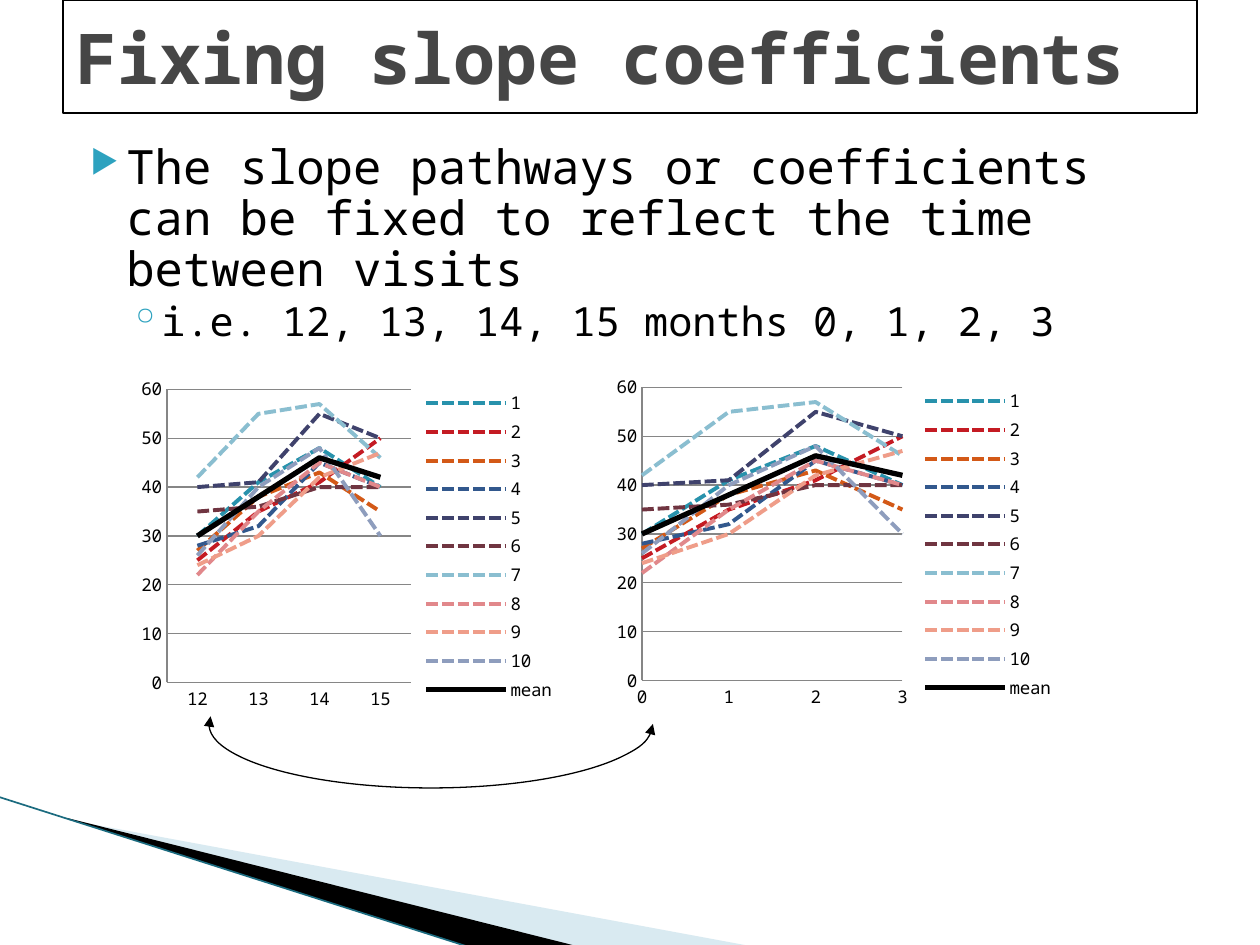
from lxml import etree
from pptx import Presentation
from pptx.chart.data import CategoryChartData
from pptx.dml.color import RGBColor
from pptx.enum.chart import XL_CHART_TYPE, XL_LEGEND_POSITION, XL_MARKER_STYLE, XL_TICK_MARK
from pptx.enum.dml import MSO_LINE
from pptx.enum.shapes import MSO_CONNECTOR, MSO_SHAPE
from pptx.enum.text import MSO_ANCHOR, PP_ALIGN
from pptx.oxml.ns import qn
from pptx.util import Pt

SCALE = 914400 / 126
FONT = "Noto Sans Mono"
BLACK = RGBColor(0x00, 0x00, 0x00)
WHITE = RGBColor(0xFF, 0xFF, 0xFF)
TITLE_GRAY = RGBColor(0x46, 0x46, 0x46)
GRID_GRAY = RGBColor(0x86, 0x86, 0x86)
PALE_BLUE = RGBColor(0xA0, 0xCB, 0xDC)
DARK_TEAL = RGBColor(0x1B, 0x6B, 0x7F)
SERIES_COLORS = [
    RGBColor(0x28, 0x92, 0xAC), RGBColor(0xC4, 0x1B, 0x23),
    RGBColor(0xD3, 0x59, 0x17), RGBColor(0x32, 0x58, 0x8D),
    RGBColor(0x3F, 0x42, 0x6C), RGBColor(0x70, 0x35, 0x41),
    RGBColor(0x8A, 0xBE, 0xD0), RGBColor(0xE1, 0x88, 0x8B),
    RGBColor(0xEF, 0x9D, 0x89), RGBColor(0x8E, 0x9D, 0xBD),
]
DASHED = MSO_LINE.SQUARE_DOT
NO_TICK = XL_TICK_MARK.NONE


def px(*lengths):
    return [round(length * SCALE) for length in lengths]


def add_child(parent, tag, **attributes):
    return etree.SubElement(parent, qn(tag), attributes)


presentation = Presentation()
presentation.slide_width, presentation.slide_height = px(1260, 945)
slide = presentation.slides.add_slide(presentation.slide_layouts[6])
slide.background.fill.solid()
slide.background.fill.fore_color.rgb = WHITE
shapes = slide.shapes

for color, opacity, start, corners in [
    (PALE_BLUE, "40000", (69, 820), [(750, 946), (575, 946), (69, 819)]),
    (BLACK, "100000", (67, 818), [(576, 946), (469, 947), (68, 819)]),
]:
    builder = shapes.build_freeform(*start, scale=SCALE)
    builder.add_line_segments(corners)
    wedge = builder.convert_to_shape()
    wedge.shadow.inherit = False
    wedge.fill.solid()
    wedge.fill.fore_color.rgb = color
    wedge.line.fill.background()
    color_element = wedge.fill._xPr.find(qn("a:solidFill"))[0]
    add_child(color_element, "a:alpha", val=opacity)

edge = shapes.add_connector(MSO_CONNECTOR.STRAIGHT, *px(-1, 797, 469, 947))
edge.line.color.rgb = DARK_TEAL
edge.line.width = Pt(0.95)
add_child(edge._element.spPr, "a:effectLst")

body = shapes.add_textbox(*px(63, 137, 1134, 649))
body.text_frame.word_wrap = True
bullets = [
    ("The slope pathways or coefficients can be fixed to reflect the time between visits",
     27, 0, 0, 51, -36, "▶", "68000"),
    ("i.e. 12, 13, 14, 15 months 0, 1, 2, 3", 23, 1, 3.2, 86, -32, "◦", "100000"),
]
for index, (text, size, level, before, margin, indent, mark, mark_size) in enumerate(bullets):
    paragraph = body.text_frame.add_paragraph() if index else body.text_frame.paragraphs[0]
    paragraph.text = text
    paragraph.level = level
    properties = paragraph._p.get_or_add_pPr()
    properties.set("marL", str(px(margin)[0]))
    properties.set("indent", str(px(indent)[0]))
    add_child(add_child(properties, "a:buClr"), "a:srgbClr", val="2DA2BF")
    add_child(properties, "a:buSzPct", val=mark_size)
    add_child(properties, "a:buChar", char=mark)
    paragraph.space_before = Pt(before)
    paragraph.line_spacing = 0.9
    paragraph.font.name = FONT
    paragraph.font.size = Pt(size)
    paragraph.font.color.rgb = BLACK

title = shapes.add_shape(MSO_SHAPE.RECTANGLE, *px(63, 0, 1134, 113))
title.shadow.inherit = False
title.fill.background()
title.line.color.rgb = BLACK
title.line.width = Pt(0.75)
title.text_frame.word_wrap = True
title.text_frame.vertical_anchor = MSO_ANCHOR.MIDDLE
paragraph = title.text_frame.paragraphs[0]
paragraph.text = "Fixing slope coefficients"
paragraph.alignment = PP_ALIGN.LEFT
paragraph.font.name = FONT
paragraph.font.size = Pt(40)
paragraph.font.bold = True
paragraph.font.color.rgb = TITLE_GRAY

scores = [
    (30, 41, 48, 40), (25, 35, 41, 50), (27, 38, 43, 35), (28, 32, 45, 40),
    (40, 41, 55, 50), (35, 36, 40, 40), (42, 55, 57, 46), (22, 35, 45, 40),
    (24, 30, 42, 47), (26, 40, 48, 30),
]
means = [round(sum(visit) / len(scores)) for visit in zip(*scores)]

for first_visit, frame, plot_left, plot_width, crossing in [
    (12, (132, 372, 436, 349), 0.08, 0.56, "between"),
    (0, (610, 370, 457, 349), 0.07, 0.57, "midCat"),
]:
    chart_data = CategoryChartData()
    chart_data.categories = [str(first_visit + step) for step in range(4)]
    for number, values in enumerate(scores, 1):
        chart_data.add_series(str(number), values)
    chart_data.add_series("mean", means)
    chart = shapes.add_chart(XL_CHART_TYPE.LINE, *px(*frame), chart_data).chart
    chart.has_title = False
    chart.font.name = FONT
    chart.font.size = Pt(10)
    chart.font.color.rgb = BLACK
    chart.has_legend = True
    chart.legend.position = XL_LEGEND_POSITION.RIGHT
    chart.legend.include_in_layout = False

    value_axis = chart.value_axis
    value_axis.minimum_scale, value_axis.maximum_scale = 0, 60
    value_axis.major_unit = 10
    value_axis.has_major_gridlines = True
    for axis in (chart.category_axis, value_axis):
        axis.major_tick_mark = NO_TICK
        axis.minor_tick_mark = NO_TICK
    for line in (chart.category_axis.format.line, value_axis.format.line,
                 value_axis.major_gridlines.format.line):
        line.color.rgb = GRID_GRAY
        line.width = Pt(0.75)
    cross_between = value_axis._element.find(qn("c:crossBetween"))
    if cross_between is None:
        cross_between = etree.Element(qn("c:crossBetween"))
        value_axis._element.find(qn("c:majorUnit")).addprevious(cross_between)
    cross_between.set("val", crossing)

    plot = chart.plots[0]
    plot.vary_by_categories = False
    for series, color in zip(plot.series, SERIES_COLORS + [BLACK]):
        series.smooth = False
        series.marker.style = XL_MARKER_STYLE.NONE
        series.format.line.color.rgb = color
        series.format.line.width = Pt(2.25)
        if series.name == "mean":
            series.format.line.width = Pt(3)
        else:
            series.format.line.dash_style = DASHED

    plot_area = chart._chartSpace.chart.plotArea
    for old_layout in plot_area.findall(qn("c:layout")):
        plot_area.remove(old_layout)
    layout = etree.Element(qn("c:layout"))
    plot_area.insert(0, layout)
    manual_layout = add_child(layout, "c:manualLayout")
    for tag, value in [("layoutTarget", "inner"), ("xMode", "edge"), ("yMode", "edge"),
                       ("x", plot_left), ("y", 0.05), ("w", plot_width), ("h", 0.84)]:
        add_child(manual_layout, "c:" + tag, val=str(value))

link = shapes.add_shape(MSO_SHAPE.ARC, *px(209, 660, 444, 128))
link.adjustments[0] = 0
link.adjustments[1] = 182 * 0.6
link.shadow.inherit = False
link.fill.background()
link.line.color.rgb = BLACK
link.line.width = Pt(0.75)
for end in ("a:headEnd", "a:tailEnd"):
    add_child(link.line._get_or_add_ln(), end, type="triangle")

presentation.save("out.pptx")
